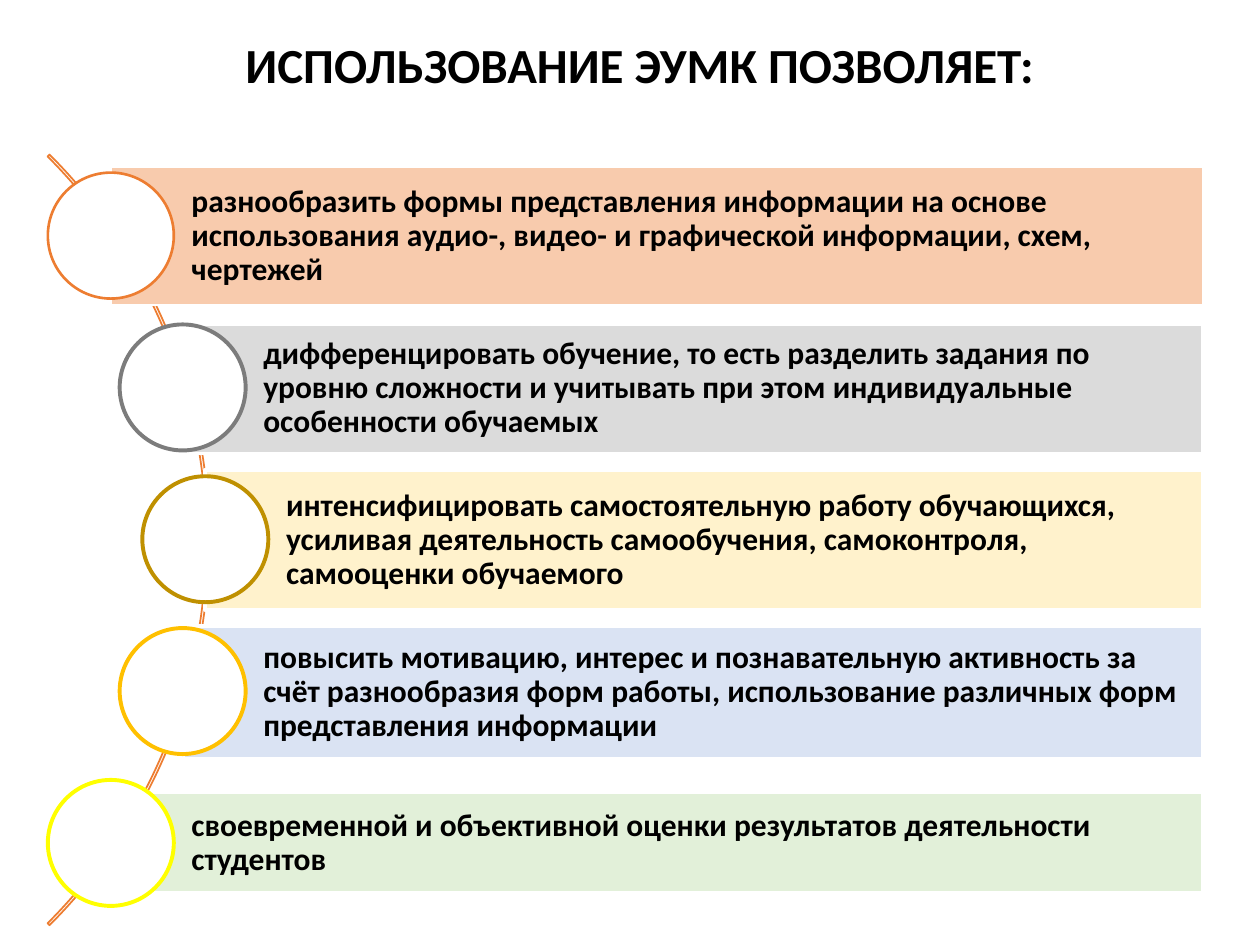
import pptx
import pptx.util
import pptx.dml.color
import pptx.enum.shapes
import pptx.enum.text

Inches = pptx.util.Inches
Pt = pptx.util.Pt
SHAPE = pptx.enum.shapes.MSO_SHAPE
ALIGN = pptx.enum.text.PP_ALIGN
MIDDLE = pptx.enum.text.MSO_ANCHOR.MIDDLE

COLORS = {
    "text": "000000", "white": "FFFFFF", "orange": "ED7D31",
    "peach": "F8CBAD", "silver": "DBDBDB", "cream": "FFF2CC",
    "sky": "DAE3F3", "mint": "E2F0D9",
    "gray": "7C7C7C", "bronze": "BF9000", "gold": "FFC000", "yellow": "FFFF00",
}

RIGHT = 9.55            # shared right edge of the bars
DOT = 1.0               # circle diameter
TOP, STEP = 1.37, 1.205  # first circle and the pitch of the rest

# bar left, top, height, bar fill, bar line width, circle line, its width, text
ROWS = [
    (0.88, 1.33, 1.09, "peach", 1, "orange", 1.5,
     "разнообразить формы представления информации на основе использования "
     "аудио-, видео- и графической информации, схем, чертежей"),
    (1.45, 2.57, 1.03, "silver", 2.25, "gray", 2.25,
     "дифференцировать обучение, то есть разделить задания по уровню сложности "
     "и учитывать при этом индивидуальные особенности обучаемых"),
    (1.63, 3.73, 1.11, "cream", 2.25, "bronze", 2.25,
     "интенсифицировать самостоятельную работу обучающихся, усиливая "
     "деятельность самообучения, самоконтроля, самооценки обучаемого"),
    (1.45, 4.97, 1.05, "sky", 2.25, "gold", 2.25,
     "повысить мотивацию, интерес и познавательную активность за счёт "
     "разнообразия форм работы, использование различных форм представления "
     "информации"),
    (0.88, 6.29, 0.8, "mint", 2.25, "yellow", 2.25,
     "своевременной и объективной оценки результатов деятельности студентов"),
]


def color(name):
    return pptx.dml.color.RGBColor.from_string(COLORS[name])


def assign(item, values):
    for key, value in values.items():
        setattr(item, key, value)


def write(shape, text, size, align, inset):
    frame = shape.text_frame
    assign(frame, {
        "word_wrap": True, "vertical_anchor": MIDDLE,
        "margin_left": Inches(inset[0]), "margin_right": Inches(inset[1]),
        "margin_top": Inches(0.05), "margin_bottom": Inches(0.05),
    })
    para = frame.paragraphs[0]
    assign(para, {"alignment": align, "line_spacing": 0.9})
    run = para.add_run()
    run.text = text
    assign(run.font, {"name": "Calibri", "size": Pt(size), "bold": True})
    run.font.color.rgb = color("text")


def draw(slide, kind, box, fill, line, width):
    shape = slide.shapes.add_shape(kind, *map(Inches, box))
    shape.shadow.inherit = False
    if fill:
        shape.fill.solid()
        shape.fill.fore_color.rgb = color(fill)
    else:
        shape.fill.background()
    shape.line.color.rgb = color(line)
    shape.line.width = Pt(width)
    return shape


def add_title(slide, text):
    box = slide.shapes.add_textbox(*map(Inches, (0.23, 0, 9.69, 1.08)))
    write(box, text, 28, ALIGN.CENTER, (0.1, 0.1))


def add_arc(slide):
    arc = draw(slide, SHAPE.BLOCK_ARC, (-6.99, -0.04, 8.65, 8.65),
               None, "orange", 1)
    # start angle, end angle (315 and 45 degrees) and band thickness
    for i, value in enumerate((189, 27, 0.0025)):
        arc.adjustments[i] = value


def add_row(slide, i, row):
    left, top, height, fill, edge, ring, width, text = row
    bar = draw(slide, SHAPE.RECTANGLE, (left, top, RIGHT - left, height),
               fill, "white", edge)
    write(bar, text, 18, ALIGN.LEFT, (0.64, 0.05))
    # The circle is centred on the left edge of the bar
    draw(slide, SHAPE.OVAL, (left - DOT / 2, TOP + i * STEP, DOT, DOT),
         "white", ring, width)


def main():
    deck = pptx.Presentation()
    assign(deck, {"slide_width": Inches(10), "slide_height": Inches(7.5)})
    slide = deck.slides.add_slide(deck.slide_layouts[6])

    # Heading
    add_title(slide, "ИСПОЛЬЗОВАНИЕ ЭУМК ПОЗВОЛЯЕТ:")

    # Curved list
    add_arc(slide)
    for i, row in enumerate(ROWS):
        add_row(slide, i, row)

    deck.save("out.pptx")


if __name__ == "__main__":
    main()
